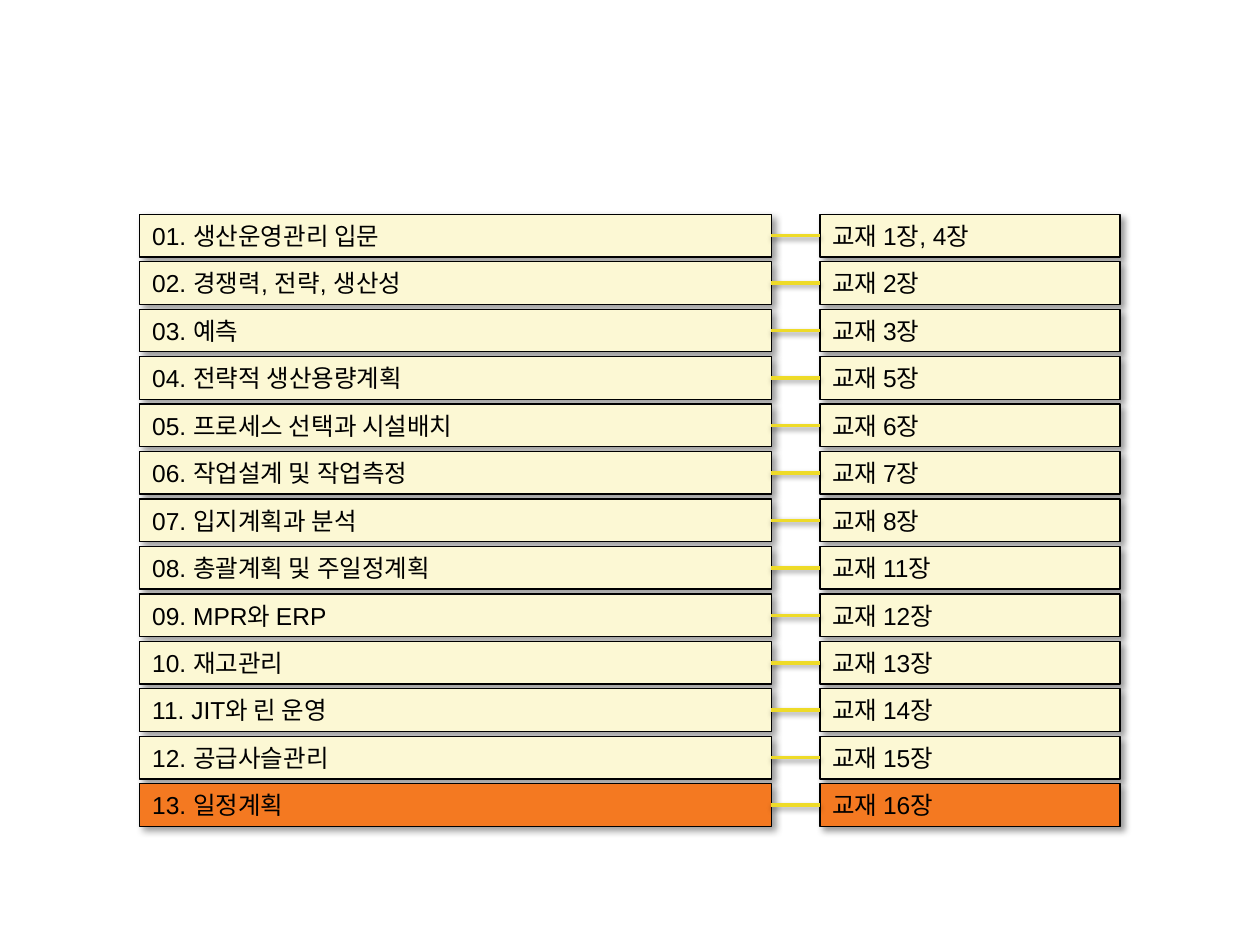
from lxml.etree import SubElement
from pptx import Presentation
from pptx.dml.color import RGBColor
from pptx.enum.shapes import MSO_CONNECTOR, MSO_SHAPE
from pptx.enum.text import MSO_ANCHOR, MSO_AUTO_SIZE, PP_ALIGN
from pptx.oxml.ns import qn
from pptx.util import Cm, Pt

CREAM = RGBColor(0xFC, 0xF8, 0xD4)
ORANGE = RGBColor(0xF4, 0x79, 0x21)
YELLOW = RGBColor(0xEE, 0xDB, 0x28)
BLACK = RGBColor(0x00, 0x00, 0x00)

ROW_HEIGHT = 0.86
TOPIC_WIDTH = 12.73
CHAPTER_WIDTH = 6.05
CURRENT = 12
COURSE = [
    ("01. 생산운영관리 입문", "교재 1장, 4장"),
    ("02. 경쟁력, 전략, 생산성", "교재 2장"),
    ("03. 예측", "교재 3장"),
    ("04. 전략적 생산용량계획", "교재 5장"),
    ("05. 프로세스 선택과 시설배치", "교재 6장"),
    ("06. 작업설계 및 작업측정", "교재 7장"),
    ("07. 입지계획과 분석", "교재 8장"),
    ("08. 총괄계획 및 주일정계획", "교재 11장"),
    ("09. MPR와 ERP", "교재 12장"),
    ("10. 재고관리", "교재 13장"),
    ("11. JIT와 린 운영", "교재 14장"),
    ("12. 공급사슬관리", "교재 15장"),
    ("13. 일정계획", "교재 16장"),
]


def add_shadow(shape, opacity, blur, distance, angle):
    """Give a shape or connector a black outer shadow."""
    effects = SubElement(shape._element.spPr, qn("a:effectLst"))
    shadow = SubElement(
        effects, qn("a:outerShdw"), blurRad=str(Pt(blur)), dist=str(Pt(distance)),
        dir=str(angle * 60000), algn="ctr", rotWithShape="0")
    color = SubElement(shadow, qn("a:srgbClr"), val=str(BLACK))
    SubElement(color, qn("a:alpha"), val=str(opacity * 1000))


def add_label(page, left, top, width, text, fill):
    """Draw one bordered label with its text on the left."""
    box = page.shapes.add_shape(
        MSO_SHAPE.RECTANGLE, Cm(left), Cm(top), Cm(width), Cm(ROW_HEIGHT))
    box.fill.solid()
    box.fill.fore_color.rgb = fill
    box.line.color.rgb = BLACK
    box.line.width = Pt(0.75)
    add_shadow(box, 40, 4, 3, 45)
    frame = box.text_frame
    frame.word_wrap = True
    frame.auto_size = MSO_AUTO_SIZE.SHAPE_TO_FIT_TEXT
    frame.vertical_anchor = MSO_ANCHOR.MIDDLE
    para = frame.paragraphs[0]
    para.alignment = PP_ALIGN.LEFT
    span = para.add_run()
    span.text = text
    span.font.name = "Arial"
    span.font.size = Pt(14)
    span.font.color.rgb = BLACK


def add_link(page, start, end, height):
    """Draw the level line that joins a topic to its chapter."""
    link = page.shapes.add_connector(
        MSO_CONNECTOR.STRAIGHT, Cm(start), Cm(height), Cm(end), Cm(height))
    link.line.color.rgb = YELLOW
    link.line.width = Pt(2)
    add_shadow(link, 38, 3.1, 1.6, 90)


def add_course_plan(page, left, top, width, height):
    """Spread the course rows evenly over the given box."""
    pitch = (height - ROW_HEIGHT) / (len(COURSE) - 1)
    chapter_left = left + width - CHAPTER_WIDTH
    for index, (topic, chapter) in enumerate(COURSE):
        row_top = top + index * pitch
        fill = ORANGE if index == CURRENT else CREAM
        add_label(page, left, row_top, TOPIC_WIDTH, topic, fill)
        add_label(page, chapter_left, row_top, CHAPTER_WIDTH, chapter, fill)
        add_link(page, left + TOPIC_WIDTH, chapter_left, row_top + ROW_HEIGHT / 2)


def main():
    """Build the deck and save it."""
    deck = Presentation()
    deck.slide_width, deck.slide_height = Cm(25.4), Cm(19.05)
    page = deck.slides.add_slide(deck.slide_layouts[6])
    add_course_plan(page, 2.82, 4.32, 19.76, 12.34)
    deck.save("out.pptx")


if __name__ == "__main__":
    main()
